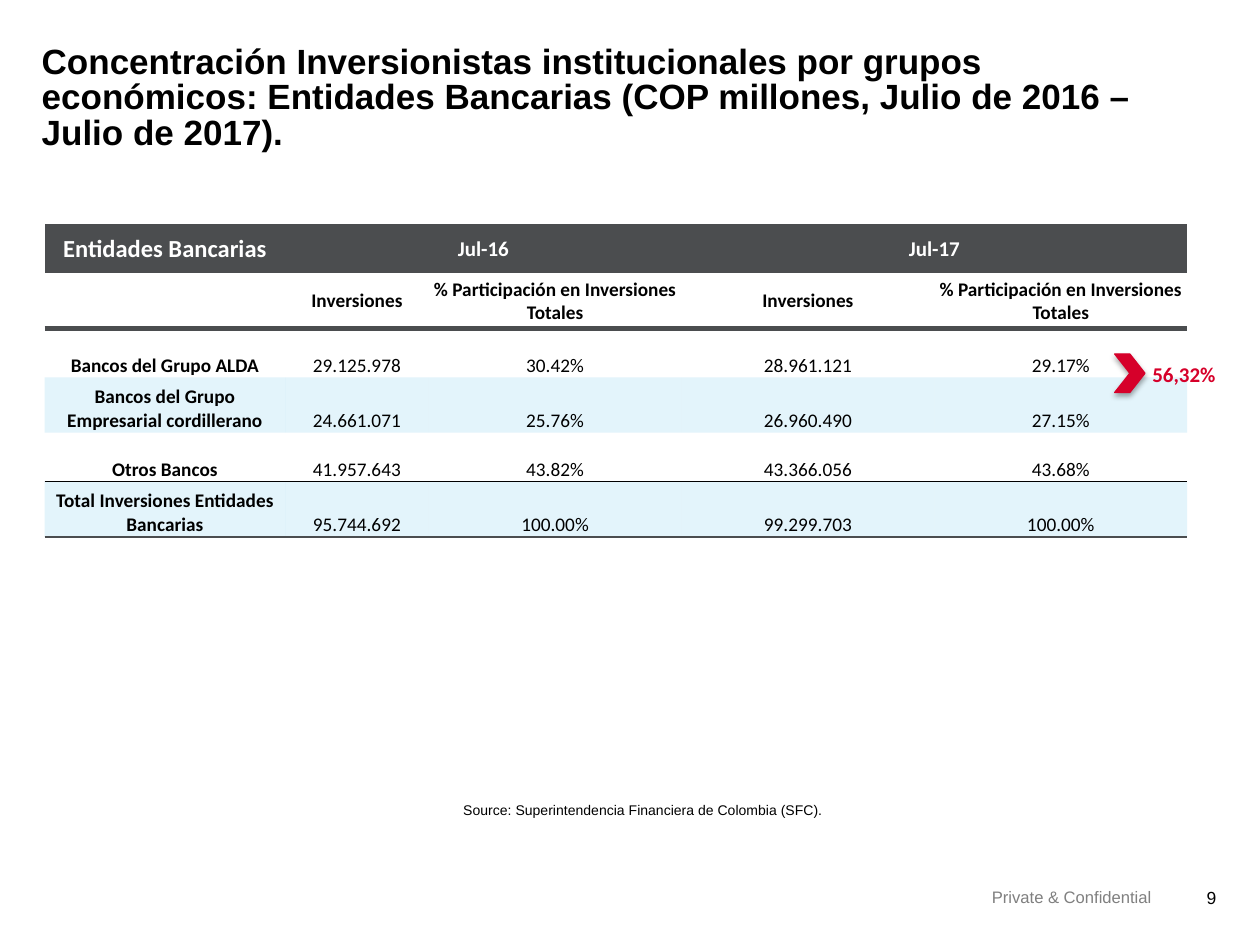
from dataclasses import dataclass

from lxml import etree
from pptx import Presentation
from pptx.dml.color import RGBColor
from pptx.enum.shapes import MSO_SHAPE
from pptx.enum.text import MSO_ANCHOR, MSO_AUTO_SIZE, PP_ALIGN
from pptx.oxml.ns import qn
from pptx.util import Pt

LEFT, CENTER, RIGHT = PP_ALIGN.LEFT, PP_ALIGN.CENTER, PP_ALIGN.RIGHT
TOP, MIDDLE, BOTTOM = MSO_ANCHOR.TOP, MSO_ANCHOR.MIDDLE, MSO_ANCHOR.BOTTOM
FIT_SHAPE, NO_FIT = MSO_AUTO_SIZE.SHAPE_TO_FIT_TEXT, MSO_AUTO_SIZE.NONE
CHEVRON = MSO_SHAPE.CHEVRON

BLACK = RGBColor(0x00, 0x00, 0x00)
WHITE = RGBColor(0xFF, 0xFF, 0xFF)
GRAY = RGBColor(0x80, 0x80, 0x80)
DARK = RGBColor(0x4B, 0x4D, 0x4F)
SKY = RGBColor(0x73, 0xC8, 0xEB)
RED = RGBColor(0xD6, 0x00, 0x2A)

PLAIN_TABLE = "{2D5ABB26-0587-4C30-8999-92F81FD0307C}"
COLUMN_WIDTHS = (137.5, 82, 144.5, 144.5, 144.5)
ROW_HEIGHTS = (28.1, 31.5) * 3


@dataclass(frozen=True)
class Style:
    size: float
    color: RGBColor = BLACK
    bold: bool = False
    font: str = "Calibri"


@dataclass(frozen=True)
class Note:
    text: str
    box: tuple[float, float, float, float]
    style: Style
    align: PP_ALIGN
    anchor: MSO_ANCHOR = TOP
    bottom_inset: float = 0
    line_spacing: float = 1


@dataclass(frozen=True)
class Rule:
    color: RGBColor
    width: float


@dataclass(frozen=True)
class Row:
    texts: tuple[str, ...]
    styles: tuple[Style, ...]
    anchor: MSO_ANCHOR = BOTTOM
    fill: RGBColor | None = None
    opacity: int = 100
    top: Rule | None = None
    bottom: Rule | None = None


HEADING = Style(11, bold=True)
FIGURES = (HEADING,) + (Style(11),) * 4
PERIOD = Style(12, WHITE, True)
THICK, THIN, CLOSING = Rule(DARK, 3), Rule(BLACK, 1), Rule(DARK, 1.5)
SHARE = "% Participación en Inversiones Totales"

ROWS = (
    Row(("Entidades Bancarias", "Jul-16", "", "Jul-17", ""),
        (Style(14, WHITE, True),) + (PERIOD,) * 4, MIDDLE, DARK),
    Row(("", "Inversiones", SHARE, "Inversiones", SHARE),
        (HEADING,) * 5, MIDDLE, WHITE, bottom=THICK),
    Row(("Bancos del Grupo ALDA", "29.125.978", "30.42%", "28.961.121", "29.17%"),
        FIGURES, top=THICK),
    Row(("Bancos del Grupo Empresarial cordillerano",
         "24.661.071", "25.76%", "26.960.490", "27.15%"),
        FIGURES, fill=SKY, opacity=20),
    Row(("Otros Bancos", "41.957.643", "43.82%", "43.366.056", "43.68%"),
        FIGURES, bottom=THIN),
    Row(("Total Inversiones Entidades Bancarias",
         "95.744.692", "100.00%", "99.299.703", "100.00%"),
        FIGURES, fill=SKY, opacity=20, top=THIN, bottom=CLOSING),
)

TITLE = Note(
    "Concentración Inversionistas institucionales por grupos económicos: "
    "Entidades Bancarias (COP millones, Julio de 2016 – Julio de 2017).",
    (23.8, 26, 652, 83), Style(20, bold=True, font="Arial"), LEFT, line_spacing=0.85)
NOTES = (
    Note("Private & Confidential", (428, 507, 230, 17),
         Style(9.5, GRAY, font="Arial"), RIGHT),
    Note("9", (678, 507, 17, 20), Style(10, font="Arial"), RIGHT),
    Note("Source: Superintendencia Financiera de Colombia (SFC).",
         (25.5, 457, 684, 18), Style(8, font="Arial"), CENTER, BOTTOM, 7.2, 1.1),
)


def add_run(paragraph, text: str, style: Style) -> None:
    run = paragraph.add_run()
    run.text = text
    run.font.name = style.font
    run.font.size = Pt(style.size)
    run.font.bold = style.bold
    run.font.color.rgb = style.color


def write_note(shape, note: Note) -> None:
    shape.left, shape.top, shape.width, shape.height = map(Pt, note.box)
    frame = shape.text_frame
    frame.word_wrap = True
    frame.auto_size = NO_FIT
    frame.vertical_anchor = note.anchor
    frame.margin_left = frame.margin_top = frame.margin_right = 0
    frame.margin_bottom = Pt(note.bottom_inset)
    paragraph = frame.paragraphs[0]
    paragraph.alignment = note.align
    paragraph.line_spacing = note.line_spacing
    add_run(paragraph, note.text, note.style)


def add_color(parent, color: RGBColor, opacity: int = 100) -> None:
    tint = etree.SubElement(parent, qn("a:srgbClr"), val=str(color))
    if opacity < 100:
        etree.SubElement(tint, qn("a:alpha"), val=str(opacity * 1000))


def add_border(properties, tag: str, rule: Rule | None) -> None:
    line = etree.SubElement(properties, qn(tag))
    if rule:
        line.set("w", str(Pt(rule.width)))
        add_color(etree.SubElement(line, qn("a:solidFill")), rule.color)
    else:
        etree.SubElement(line, qn("a:noFill"))


def format_cell(cell, text: str, style: Style, row: Row) -> None:
    cell.vertical_anchor = row.anchor
    cell.margin_left = cell.margin_top = cell.margin_right = Pt(0.7)
    cell.margin_bottom = 0
    paragraph = cell.text_frame.paragraphs[0]
    paragraph.alignment = CENTER
    if text:
        add_run(paragraph, text, style)
    else:
        paragraph.font.size = Pt(style.size)
    properties = cell._tc.get_or_add_tcPr()
    add_border(properties, "a:lnT", row.top)
    add_border(properties, "a:lnB", row.bottom)
    if row.fill is None:
        cell.fill.background()
    else:
        add_color(etree.SubElement(properties, qn("a:solidFill")), row.fill, row.opacity)


def add_holdings(slide) -> None:
    frame = slide.shapes.add_table(
        len(ROWS), len(COLUMN_WIDTHS), Pt(25.5), Pt(128),
        Pt(sum(COLUMN_WIDTHS)), Pt(sum(ROW_HEIGHTS)))
    holdings = frame.table
    holdings.first_row = holdings.horz_banding = False
    holdings._tbl.tblPr.find(qn("a:tableStyleId")).text = PLAIN_TABLE
    for column, width in zip(holdings.columns, COLUMN_WIDTHS):
        column.width = Pt(width)
    for line, height, row in zip(holdings.rows, ROW_HEIGHTS, ROWS):
        line.height = Pt(height)
        for cell, text, style in zip(line.cells, row.texts, row.styles):
            format_cell(cell, text, style, row)
    for start in (1, 3):
        holdings.cell(0, start).merge(holdings.cell(0, start + 1))


def add_callout(slide) -> None:
    callout = slide.shapes.add_group_shape().shapes
    share = callout.add_textbox(Pt(655), Pt(203), Pt(47), Pt(21.6))
    share.text_frame.word_wrap = True
    share.text_frame.auto_size = FIT_SHAPE
    share.text_frame.margin_left = Pt(3.5)
    share.text_frame.margin_right = 0
    add_run(share.text_frame.paragraphs[0], "56,32%", Style(12, RED, True))

    pointer = callout.add_shape(CHEVRON, Pt(637), Pt(202.3), Pt(17.3), Pt(22))
    pointer.fill.solid()
    pointer.fill.fore_color.rgb = RED
    pointer.line.color.rgb = RED
    pointer.line.width = Pt(0.75)
    pointer.shadow.inherit = False
    effects = pointer._element.spPr.find(qn("a:effectLst"))
    shadow = etree.SubElement(
        effects, qn("a:outerShdw"), blurRad=str(Pt(3.1)), dist=str(Pt(1.8)),
        dir=str(90 * 60000), rotWithShape="0")
    add_color(shadow, BLACK, 35)


def main() -> None:
    deck = Presentation()
    deck.slide_width, deck.slide_height = Pt(720), Pt(540)
    slide = deck.slides.add_slide(deck.slide_layouts.get_by_name("Title Only"))
    write_note(slide.shapes.title, TITLE)
    for note in NOTES:
        write_note(slide.shapes.add_textbox(*map(Pt, note.box)), note)
    add_holdings(slide)
    add_callout(slide)
    deck.save("out.pptx")


if __name__ == "__main__":
    main()
